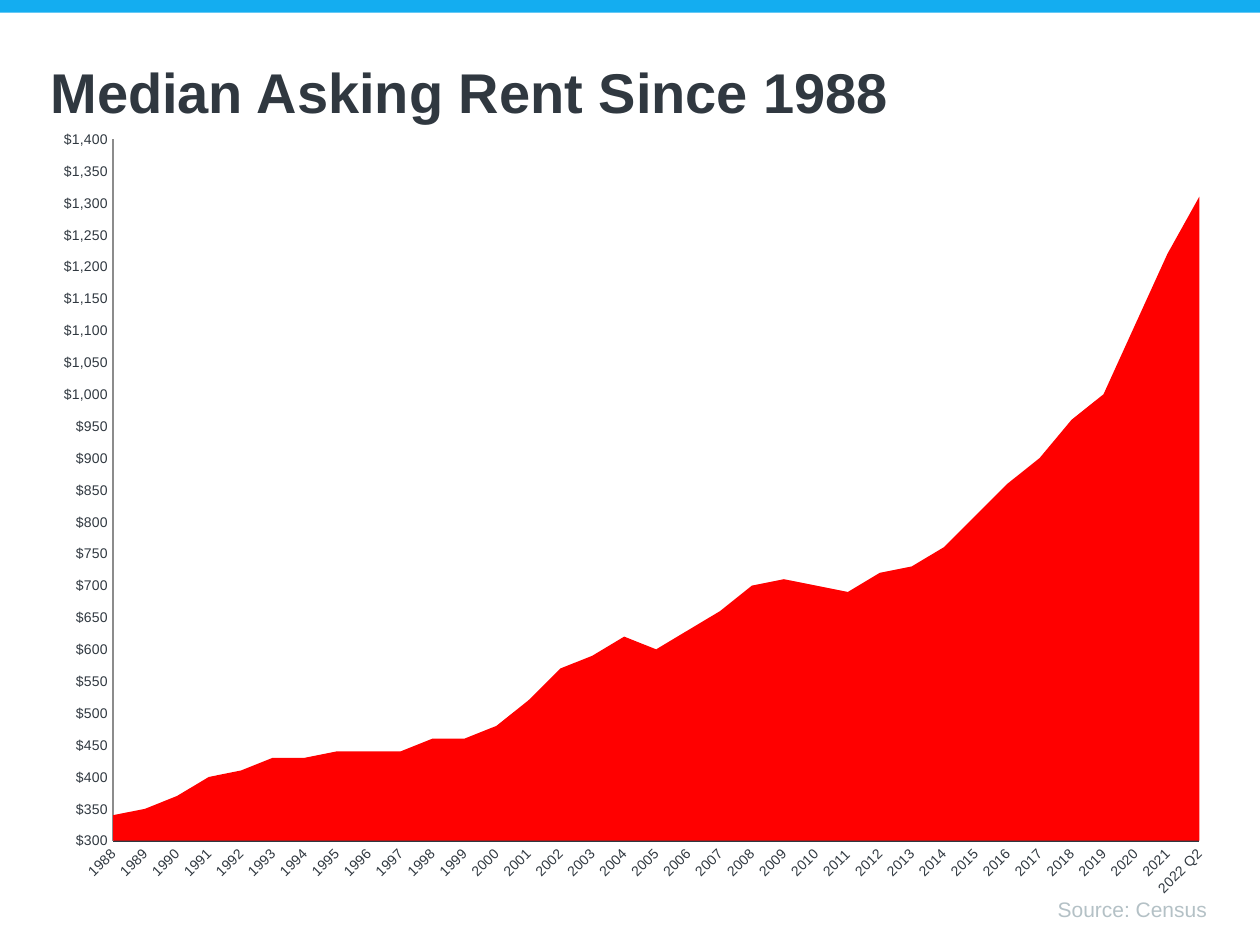
from lxml.etree import SubElement
from pptx import Presentation
from pptx.chart.data import CategoryChartData
from pptx.dml.color import RGBColor
from pptx.enum.chart import XL_CHART_TYPE, XL_TICK_MARK
from pptx.enum.shapes import MSO_SHAPE
from pptx.enum.text import MSO_ANCHOR, PP_ALIGN
from pptx.oxml.ns import qn
from pptx.util import Inches, Pt

TITLE = "Median Asking Rent Since 1988"
SOURCE = "Source: Census"
YEARS = [str(year) for year in range(1988, 2022)] + ["2022 Q2"]
RENTS = [
    340, 350, 370, 400, 410, 430, 430, 440, 440, 440, 460, 460,
    480, 520, 570, 590, 620, 600, 630, 660, 700, 710, 700, 690,
    720, 730, 760, 810, 860, 900, 960, 1000, 1110, 1220, 1310,
]
PLOT = {"x": 0.077, "y": 0.094, "w": 0.901, "h": 0.825}
THEME = {
    "font": "Arial", "bar": "14ADF0", "ink": "303840", "muted": "B4C1C6",
    "area": "FF0000", "axis": "8C8C8C",
    "title": 32, "source": 12, "label": 8,
}


def rgb(name):
    return RGBColor.from_string(THEME[name])


def add_text(s, text, box, size, color, bold=False, align=PP_ALIGN.LEFT,
             top=0, bottom=0, spacing=1.0):
    tf = s.shapes.add_textbox(*map(Inches, box)).text_frame
    tf.word_wrap = True
    tf.vertical_anchor = MSO_ANCHOR.TOP
    tf.margin_left = tf.margin_right = 0
    tf.margin_top, tf.margin_bottom = Inches(top), Inches(bottom)
    p = tf.paragraphs[0]
    p.alignment, p.line_spacing = align, spacing
    r = p.add_run()
    r.text = text
    r.font.name, r.font.size, r.font.bold = THEME["font"], Pt(THEME[size]), bold
    r.font.color.rgb = rgb(color)


def style_axis(axis, color, width):
    axis.has_major_gridlines = False
    axis.major_tick_mark = axis.minor_tick_mark = XL_TICK_MARK.NONE
    axis.format.line.color.rgb = rgb(color)
    axis.format.line.width = Pt(width)
    font = axis.tick_labels.font
    font.name, font.size = THEME["font"], Pt(THEME["label"])
    font.color.rgb = rgb("ink")


def place_plot(chart):
    area = chart.element.find(".//" + qn("c:plotArea"))
    for old in area.findall(qn("c:layout")):
        area.remove(old)
    layout = SubElement(area, qn("c:layout"))
    area.insert(0, layout)
    manual = SubElement(layout, qn("c:manualLayout"))
    settings = [("layoutTarget", "inner"), ("xMode", "edge"), ("yMode", "edge")]
    for tag, value in settings + list(PLOT.items()):
        SubElement(manual, qn(f"c:{tag}")).set("val", str(value))


def add_rent_chart(s, box):
    data = CategoryChartData(number_format='"$"#,##0')
    data.categories = YEARS
    data.add_series("Series 1", RENTS)
    chart = s.shapes.add_chart(XL_CHART_TYPE.AREA, *map(Inches, box), data).chart
    chart.has_legend = chart.has_title = False
    chart.font.name, chart.font.size = THEME["font"], Pt(THEME["label"])
    chart.font.color.rgb = rgb("ink")
    plot = chart.plots[0]
    plot.vary_by_categories = False
    fill = plot.series[0].format.fill
    fill.solid()
    fill.fore_color.rgb = rgb("area")

    years, rents = chart.category_axis, chart.value_axis
    style_axis(years, "ink", 1)
    style_axis(rents, "axis", 0.75)
    body = years._element.find(qn("c:txPr")).find(qn("a:bodyPr"))
    body.set("rot", "-2700000")
    body.set("vert", "horz")
    rents.minimum_scale, rents.maximum_scale, rents.major_unit = 300, 1400, 50
    rents.tick_labels.number_format = '"$"#,##0'
    rents.tick_labels.number_format_is_linked = False
    rents._element.find(qn("c:crossBetween")).set("val", "midCat")
    place_plot(chart)


def main():
    """Build the median asking rent slide."""
    prs = Presentation()
    prs.slide_width, prs.slide_height = Inches(10), Inches(7.5)
    s = prs.slides.add_slide(prs.slide_layouts[6])
    bar = s.shapes.add_shape(MSO_SHAPE.RECTANGLE, 0, 0, prs.slide_width, Inches(0.1))
    bar.shadow.inherit = False
    bar.fill.solid()
    bar.fill.fore_color.rgb = rgb("bar")
    bar.line.fill.background()
    add_text(s, SOURCE, (0.42, 7.09, 9.16, 0.24), "source", "muted",
             align=PP_ALIGN.RIGHT, top=0.05, bottom=0.05, spacing=0.9)
    add_rent_chart(s, (0.16, 0.47, 9.57, 6.75))
    add_text(s, TITLE, (0.4, 0.42, 9.17, 0.39), "title", "ink", bold=True, top=0.04)
    prs.save("out.pptx")


if __name__ == "__main__":
    main()
